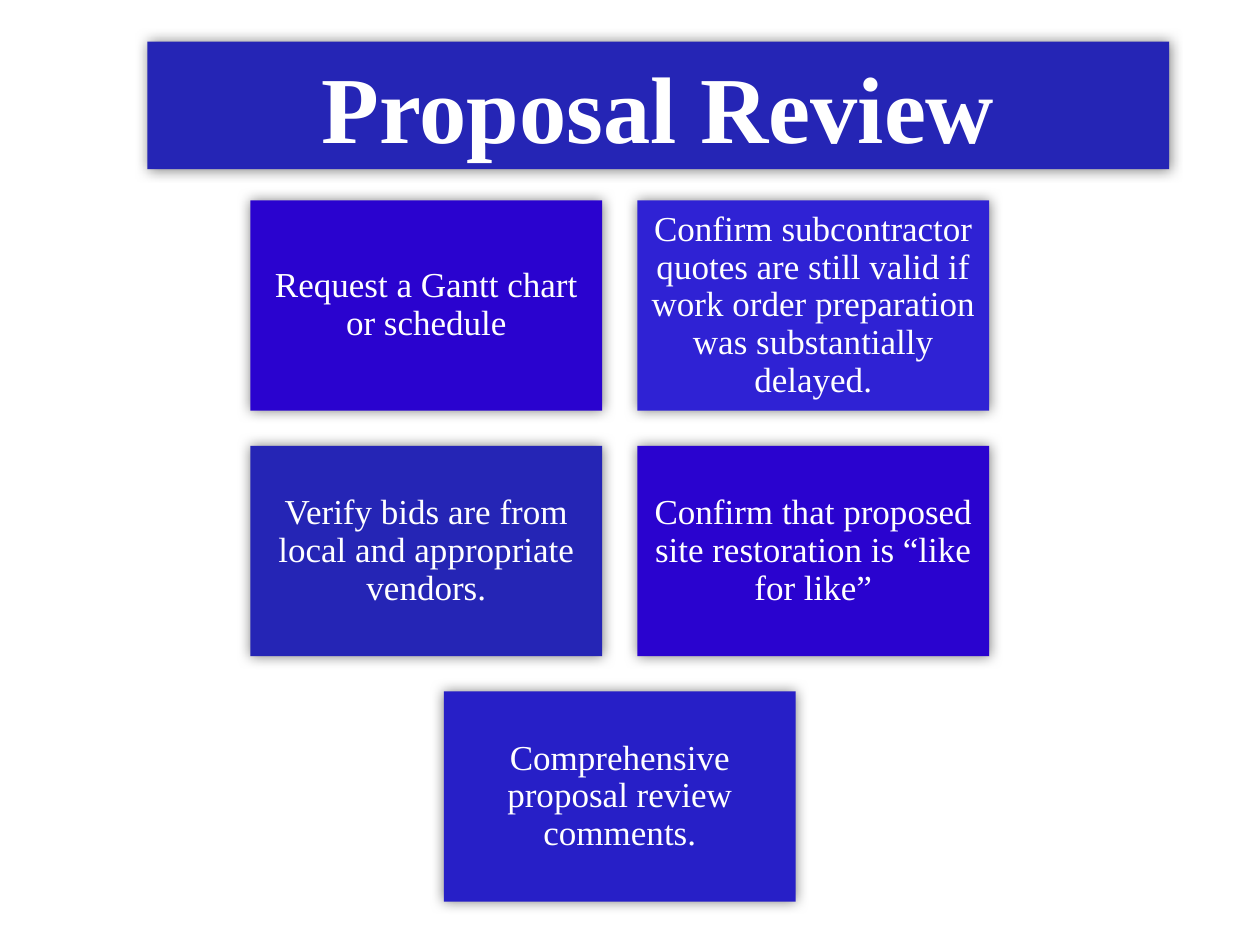
"""Build the Proposal Review slide: a title banner over five review steps."""
from lxml.etree import SubElement
from pptx import Presentation
from pptx.dml.color import RGBColor
from pptx.enum.shapes import MSO_SHAPE as SHAPE
from pptx.enum.text import MSO_ANCHOR as ANCHOR, PP_ALIGN as ALIGN
from pptx.oxml.ns import qn
from pptx.util import Cm, Pt

WHITE = RGBColor(0xFF, 0xFF, 0xFF)
VIOLET = RGBColor(0x2A, 0x03, 0xCF)
BLUE = RGBColor(0x2F, 0x22, 0xD4)
NAVY = RGBColor(0x25, 0x25, 0xB5)
INDIGO = RGBColor(0x27, 0x1F, 0xC7)

LEFT, TOP = 5.05, 4.04
WIDTH, HEIGHT, GAP = 7.09, 4.24, 0.71

STEPS = [
    (0, 0, VIOLET, "Request a Gantt chart or schedule"),
    (1, 0, BLUE, "Confirm subcontractor quotes are still valid if work order "
                 "preparation was substantially delayed."),
    (0, 1, NAVY, "Verify bids are from local and appropriate vendors."),
    (1, 1, VIOLET, "Confirm that proposed site restoration is “like for like”"),
    (0.5, 2, INDIGO, "Comprehensive proposal review comments."),
]


def add_box(x, y, w, h, color, text, size, bold=False):
    s = slide.shapes.add_shape(SHAPE.RECTANGLE, Cm(x), Cm(y), Cm(w), Cm(h))
    s.fill.solid()
    s.fill.fore_color.rgb = color
    s.line.fill.background()
    s.shadow.inherit = False
    effects = s.element.spPr.find(qn("a:effectLst"))
    shadow = SubElement(effects, qn("a:outerShdw"), blurRad=str(Pt(7.5)), dist="0",
                        algn="ctr", rotWithShape="0")
    black = SubElement(shadow, qn("a:srgbClr"), val="000000")
    SubElement(black, qn("a:alpha"), val="50000")
    tf = s.text_frame
    tf.word_wrap = True
    tf.vertical_anchor = ANCHOR.MIDDLE
    p = tf.paragraphs[0]
    p.alignment = ALIGN.CENTER
    r = p.add_run()
    r.text = text
    r.font.name = "Times New Roman"
    r.font.size = Pt(size)
    r.font.bold = bold
    r.font.color.rgb = WHITE
    return tf


prs = Presentation()
prs.slide_width, prs.slide_height = Cm(25.4), Cm(19.05)
slide = prs.slides.add_slide(prs.slide_layouts[6])

for col, row, color, text in STEPS:
    x = LEFT + col * (WIDTH + GAP)
    y = TOP + row * (HEIGHT + GAP)
    tf = add_box(x, y, WIDTH, HEIGHT, color, text, 20)
    tf.margin_left = tf.margin_right = tf.margin_top = tf.margin_bottom = Cm(0.2)
    tf.paragraphs[0].line_spacing = 0.9

add_box(2.97, 0.84, 20.6, 2.57, NAVY, "Proposal Review", 54, bold=True)

prs.save("out.pptx")
